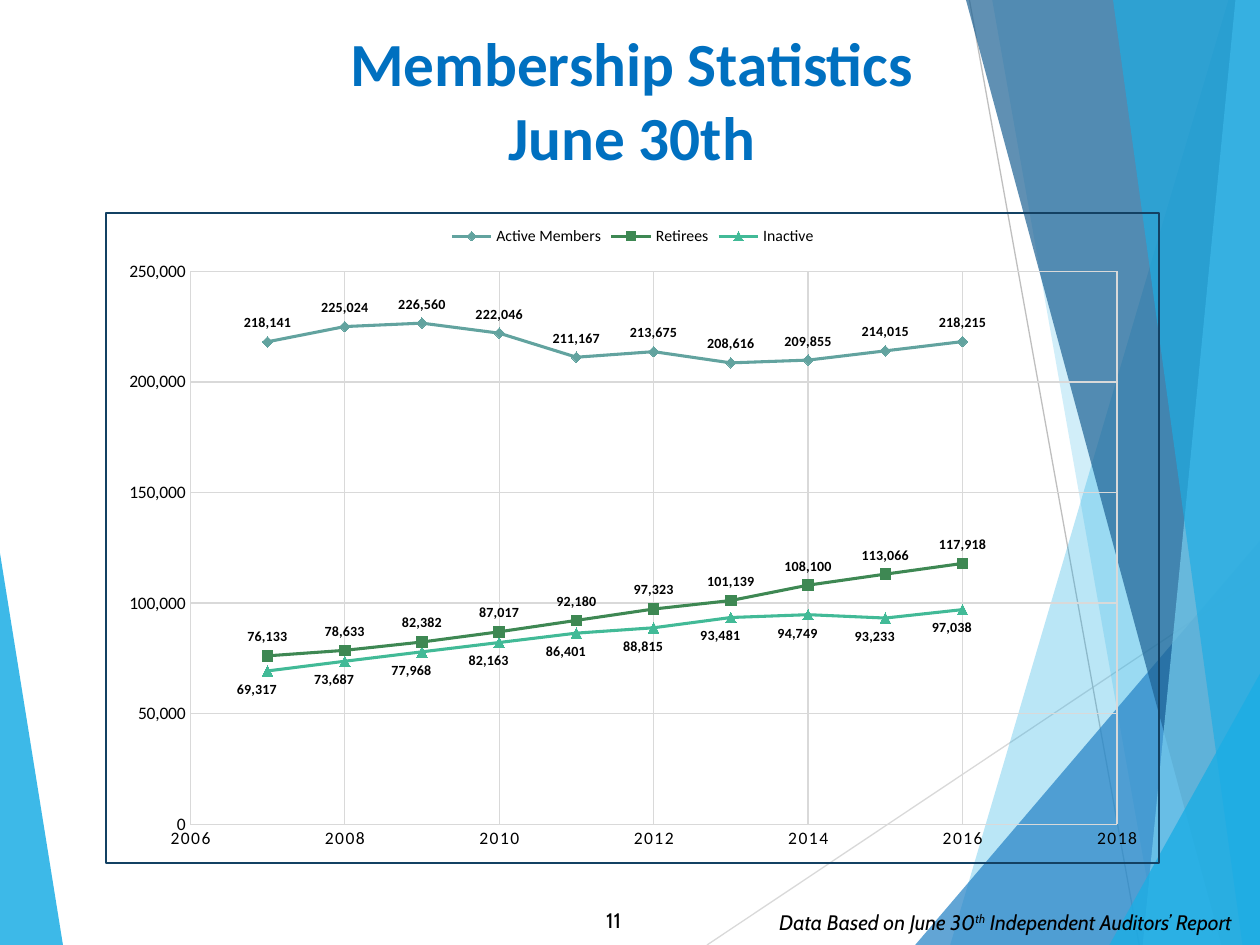
import dataclasses

import lxml.etree
import pptx
import pptx.chart.data
import pptx.dml.color
import pptx.enum.chart
import pptx.enum.text
import pptx.oxml
import pptx.oxml.ns
import pptx.util

Pt = pptx.util.Pt
RGB = pptx.dml.color.RGBColor.from_string
qn = pptx.oxml.ns.qn


@dataclasses.dataclass(frozen=True)
class Theme:
    """Colours, fonts and type sizes of the slide."""

    heading: str = "0070C0"
    ink: str = "000000"
    grid: str = "D9D9D9"
    ray: str = "BFBFBF"
    frame: str = "134163"
    sky: str = "1CADE4"
    blue: str = "2683C6"
    navy: str = "1D6294"
    pale: str = "77CEEF"
    sans: str = "Calibri"
    note: str = "Cabin"
    title_size: int = 35
    note_size: int = 12
    axis_size: int = 10
    legend_size: int = 9
    label_size: int = 8


THEME = Theme()
MARKER = pptx.enum.chart.XL_MARKER_STYLE
ABOVE = pptx.enum.chart.XL_LABEL_POSITION.ABOVE
BELOW = pptx.enum.chart.XL_LABEL_POSITION.BELOW
ALIGN = pptx.enum.text.PP_ALIGN
ANCHOR = pptx.enum.text.MSO_ANCHOR

YEARS = range(2007, 2017)
MEMBERSHIP = [
    ("Active Members", "62A39F", MARKER.DIAMOND, ABOVE,
     [218141, 225024, 226560, 222046, 211167, 213675, 208616, 209855, 214015, 218215]),
    ("Retirees", "3E8853", MARKER.SQUARE, ABOVE,
     [76133, 78633, 82382, 87017, 92180, 97323, 101139, 108100, 113066, 117918]),
    ("Inactive", "42BA97", MARKER.TRIANGLE, BELOW,
     [69317, 73687, 77968, 82163, 86401, 88815, 93481, 94749, 93233, 97038]),
]


def style_font(font, size, family, color=THEME.ink, bold=False):
    """Set size, family, colour and weight of a font."""
    font.size, font.name, font.bold = Pt(size), family, bold
    font.color.rgb = RGB(color)


def style_line(line, color, width):
    """Set colour and width of a line."""
    line.color.rgb = RGB(color)
    line.width = Pt(width)


def manual_layout(x, y, size=None):
    """Return a chart layout element, for a plot area when a size is given."""
    entries = [("x", x), ("y", y)]
    if size:
        entries = [("layoutTarget", "inner"), ("xMode", "edge"), ("yMode", "edge"),
                   *entries, ("w", size[0]), ("h", size[1])]
    body = "".join(f'<c:{tag} val="{value}"/>' for tag, value in entries)
    return pptx.oxml.parse_xml(
        f'<c:layout {pptx.oxml.ns.nsdecls("c")}><c:manualLayout>{body}</c:manualLayout></c:layout>')


def draw_facet(slide, box, corners, color, opacity):
    """Draw one translucent polygon with corners relative to the box."""
    builder = slide.shapes.build_freeform(*corners[0], scale=Pt(1))
    builder.add_line_segments(corners[1:], close=True)
    facet = builder.convert_to_shape(Pt(box[0]), Pt(box[1]))
    facet.shadow.inherit = False
    facet.fill.solid()
    facet.fill.fore_color.rgb = RGB(color)
    facet.line.fill.background()
    paint = facet._element.xpath("./p:spPr/a:solidFill/a:srgbClr")[0]
    lxml.etree.SubElement(paint, qn("a:alpha")).set("val", str(opacity * 1000))


def draw_ray(slide, box, start, end, color):
    """Draw one thin line with ends relative to the box."""
    left, top = box[:2]
    ray = slide.shapes.add_connector(
        pptx.enum.shapes.MSO_CONNECTOR.STRAIGHT,
        Pt(left + start[0]), Pt(top + start[1]), Pt(left + end[0]), Pt(top + end[1]))
    style_line(ray.line, color, 0.75)
    lxml.etree.SubElement(ray._element.spPr, qn("a:effectLst"))


def draw_backdrop(slide, box):
    """Draw the faceted decoration at both sides of the box."""
    right, bottom = box[2:]
    draw_facet(slide, box, [(0, 316), (36, bottom), (0, bottom)], THEME.sky, 85)
    draw_ray(slide, box, (404, bottom), (right, 329), THEME.grid)
    draw_ray(slide, box, (554, 0), (651, bottom), THEME.ray)
    facets = [
        (702, 0, 543, THEME.sky, 30),
        (567, 0, 662, THEME.sky, 20),
        (right, 309, 523, THEME.blue, 72),
        (552, 0, 698, THEME.navy, 70),
        (706, 0, 653, THEME.pale, 70),
        (636, 0, 710, THEME.sky, 65),
        (right, 385, 634, THEME.sky, 80),
    ]
    for upper, top, lower, color, opacity in facets:
        corners = [(upper, top), (lower, bottom), (right, bottom)]
        if upper < right:
            corners.append((right, top))
        draw_facet(slide, box, corners, color, opacity)


def add_paragraph_box(slide, box, alignment, anchor=ANCHOR.TOP):
    """Add a wrapping text box and return its paragraph."""
    frame = slide.shapes.add_textbox(*map(Pt, box)).text_frame
    frame.word_wrap = True
    frame.vertical_anchor = anchor
    paragraph = frame.paragraphs[0]
    paragraph.alignment = alignment
    return paragraph


def draw_title(slide, box):
    """Write the two-line heading."""
    heading = add_paragraph_box(slide, box, ALIGN.CENTER)
    style_font(heading.font, THEME.title_size, THEME.sans, THEME.heading, True)
    heading.add_run().text = "Membership Statistics"
    heading.add_line_break()
    heading.add_run().text = "June 30th"


def draw_source_note(slide, box):
    """Write the note on where the data come from."""
    note = add_paragraph_box(slide, box, ALIGN.RIGHT)
    style_font(note.font, THEME.note_size, THEME.note)
    note.font.italic = True
    for words in ("Data Based on June 30", "th", " Independent Auditors’ Report"):
        note.add_run().text = words
    note.runs[1]._r.get_or_add_rPr().set("baseline", "30000")


def draw_page_number(slide, box):
    """Write the page number."""
    number = add_paragraph_box(slide, box, ALIGN.RIGHT, ANCHOR.MIDDLE)
    style_font(number.font, THEME.note_size, THEME.note)
    number.add_run().text = "11"


def style_axis(axis, low, high, step, number_format):
    """Set scale, grid, line and labels of an axis."""
    axis.minimum_scale, axis.maximum_scale, axis.major_unit = low, high, step
    axis.major_tick_mark = axis.minor_tick_mark = pptx.enum.chart.XL_TICK_MARK.NONE
    axis.has_major_gridlines = True
    for line in (axis.format.line, axis.major_gridlines.format.line):
        style_line(line, THEME.grid, 0.75)
    axis.tick_labels.number_format = number_format
    axis.tick_labels.number_format_is_linked = False
    style_font(axis.tick_labels.font, THEME.axis_size, THEME.sans)


def style_series(series, color, marker, position):
    """Set line, markers and value labels of a series."""
    style_line(series.format.line, color, 1.75)
    series.marker.style, series.marker.size = marker, 6
    series.marker.format.fill.solid()
    series.marker.format.fill.fore_color.rgb = RGB(color)
    style_line(series.marker.format.line, color, 0.75)
    for index in range(len(YEARS)):
        label = series.points[index].data_label
        label.position = position
        style_font(label.font, THEME.label_size, THEME.sans, bold=True)
    if position == BELOW:
        for index in series._element.xpath(".//c:dLbl/c:idx"):
            index.addnext(manual_layout(-0.01, 0))


def draw_membership_chart(slide, box):
    """Draw the framed chart of members by year."""
    data = pptx.chart.data.XyChartData(number_format="#,##0")
    for name, *_, counts in MEMBERSHIP:
        group = data.add_series(name)
        for year, count in zip(YEARS, counts):
            group.add_data_point(year, count)
    chart = slide.shapes.add_chart(
        pptx.enum.chart.XL_CHART_TYPE.XY_SCATTER_LINES, *map(Pt, box), data).chart
    style_font(chart.font, THEME.axis_size, THEME.note)
    chart.has_title = False
    chart.has_legend = True
    chart.legend.position = pptx.enum.chart.XL_LEGEND_POSITION.TOP
    chart.legend.include_in_layout = False
    style_font(chart.legend.font, THEME.legend_size, THEME.sans)
    chart.plots[0].vary_by_categories = False
    style_axis(chart.category_axis, 2006, 2018, 2, "0")
    style_axis(chart.value_axis, 0, 250000, 50000, "#,##0")
    for series, (_, color, marker, position, _) in zip(chart.plots[0].series, MEMBERSHIP):
        style_series(series, color, marker, position)

    space = chart._chartSpace
    space.xpath(".//c:valAx[1]/c:txPr//a:defRPr")[0].set("spc", "100")
    plot_area = space.xpath("./c:chart/c:plotArea")[0]
    for layout in plot_area.xpath("./c:layout"):
        plot_area.remove(layout)
    plot_area.insert(0, manual_layout(0.08, 0.09, (0.88, 0.85)))
    space.xpath("./c:chart")[0].addnext(pptx.oxml.parse_xml(
        f'<c:spPr {pptx.oxml.ns.nsdecls("c", "a")}><a:noFill/><a:ln w="{Pt(1.25)}">'
        f'<a:solidFill><a:srgbClr val="{THEME.frame}"/></a:solidFill></a:ln></c:spPr>'))


def main():
    """Build and save the slide."""
    deck = pptx.Presentation()
    deck.slide_width, deck.slide_height = Pt(720), Pt(540)
    slide = deck.slides.add_slide(deck.slide_layouts[6])
    draw_backdrop(slide, (0, 0, 720, 540))
    draw_title(slide, (35, 11, 652, 81))
    draw_source_note(slide, (353, 516, 358, 22))
    draw_membership_chart(slide, (60, 121, 603, 373))
    draw_page_number(slide, (322, 511, 40, 29))
    deck.save("out.pptx")


if __name__ == "__main__":
    main()
